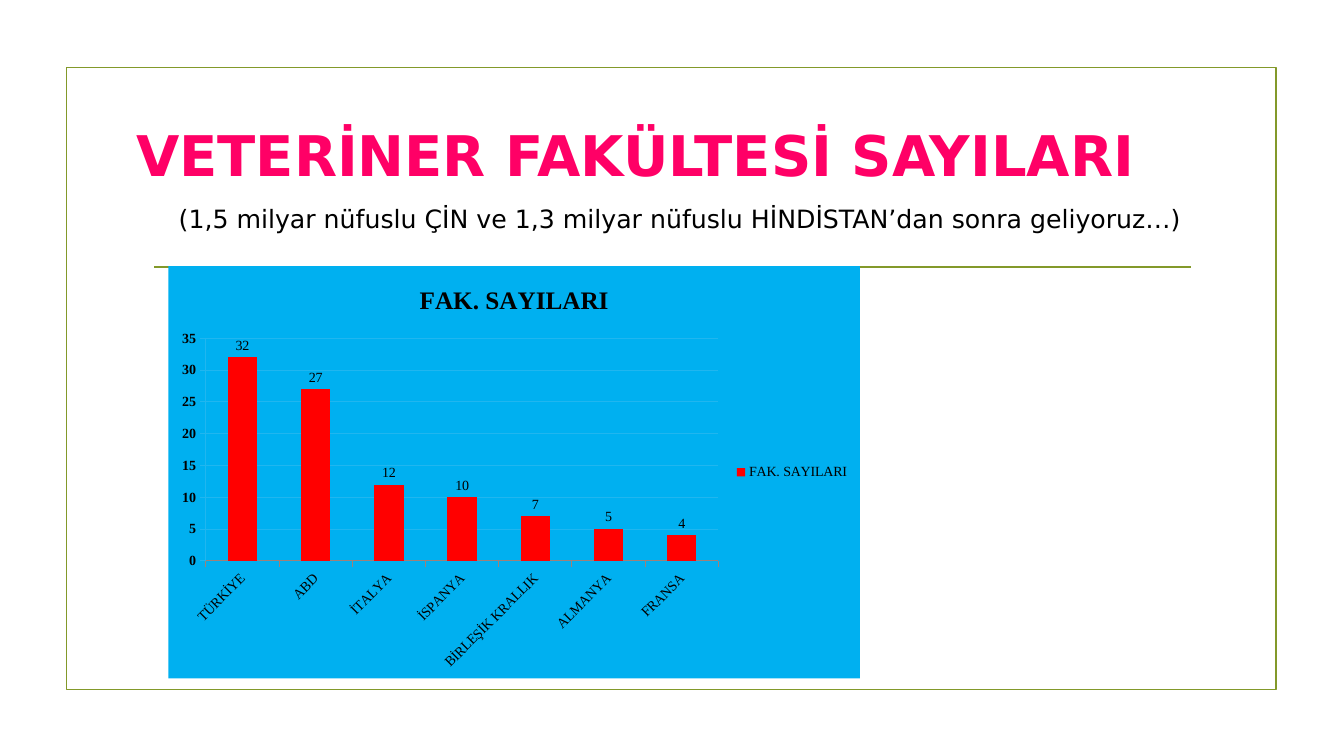
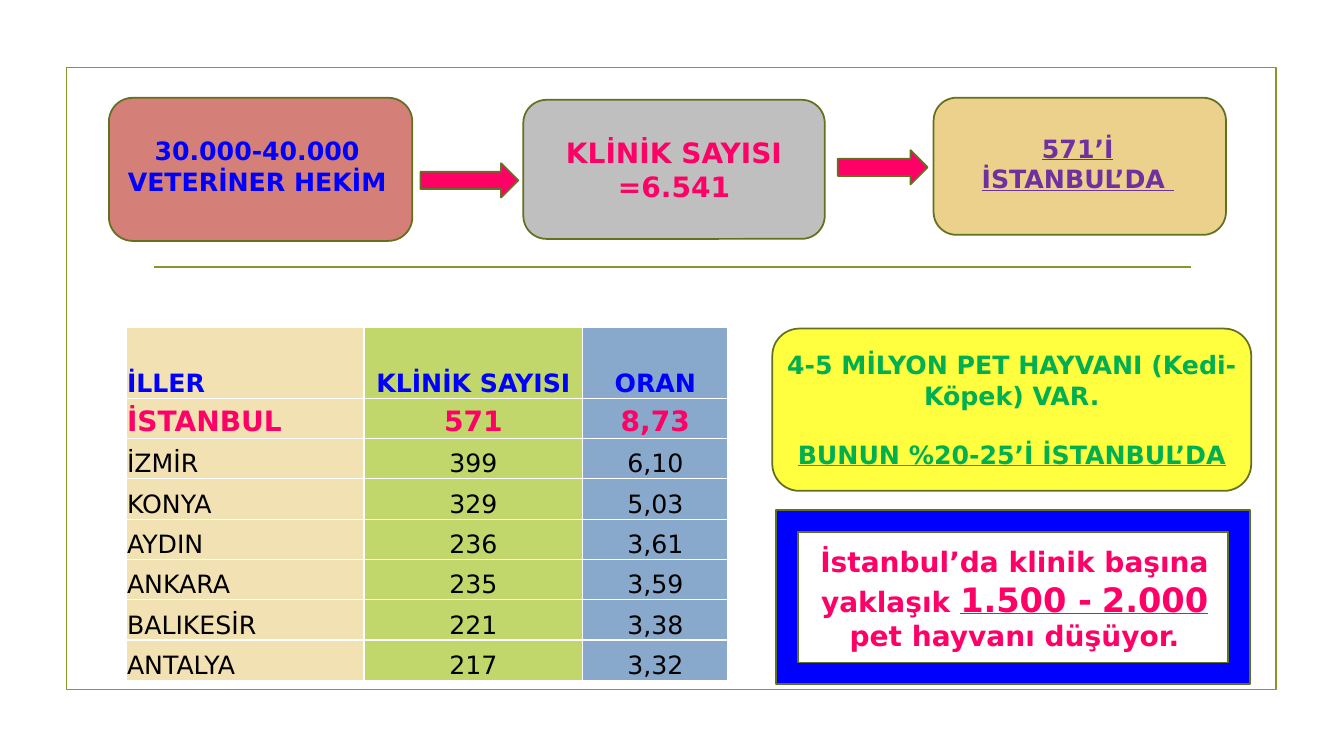
from dataclasses import dataclass

from lxml import etree
from pptx import Presentation
from pptx.chart.data import CategoryChartData
from pptx.dml.color import RGBColor
from pptx.enum.chart import XL_CHART_TYPE, XL_LABEL_POSITION, XL_LEGEND_POSITION
from pptx.enum.shapes import MSO_CONNECTOR, MSO_SHAPE
from pptx.enum.text import MSO_ANCHOR, MSO_AUTO_SIZE, PP_ALIGN
from pptx.oxml import parse_xml
from pptx.oxml.ns import nsdecls, qn
from pptx.util import Inches, Pt

CENTER, JUSTIFY, LEFT = PP_ALIGN.CENTER, PP_ALIGN.JUSTIFY, PP_ALIGN.LEFT
MIDDLE, BOTTOM = MSO_ANCHOR.MIDDLE, MSO_ANCHOR.BOTTOM
NO_AUTOFIT = MSO_AUTO_SIZE.NONE
RECTANGLE, ROUNDED = MSO_SHAPE.RECTANGLE, MSO_SHAPE.ROUNDED_RECTANGLE
FRAME, ARROW = MSO_SHAPE.FRAME, MSO_SHAPE.RIGHT_ARROW
STRAIGHT = MSO_CONNECTOR.STRAIGHT
COLUMN_CHART = XL_CHART_TYPE.COLUMN_CLUSTERED
LEGEND_RIGHT = XL_LEGEND_POSITION.RIGHT
OUTSIDE_END = XL_LABEL_POSITION.OUTSIDE_END
TITLE_ONLY, BLANK = 5, 6


@dataclass(frozen=True)
class Theme:
    font: str = "DejaVu Sans"
    chart_font: str = "Times New Roman"
    rule: str = "83992A"
    outline: str = "61711F"
    line_width: float = 1.25
    black: str = "000000"
    white: str = "FFFFFF"
    pink: str = "FF0066"
    blue: str = "0000FF"
    purple: str = "7030A0"
    green: str = "00B050"
    yellow: str = "FFFF00"
    rose: str = "D47F77"
    gray: str = "BFBFBF"
    sand: str = "EBD18C"
    sky: str = "00B0F0"
    red: str = "FF0000"
    axis: str = "A08078"
    grid: str = "20B6EF"
    columns: tuple = ("F2E1B3", "C1D66B", "88A9CB")
    title: int = 40
    accent: int = 24
    large: int = 20
    body: int = 18
    chart: int = 10


THEME = Theme()
SLIDE_SIZE = (13.33, 7.5)

TITLE = "VETERİNER FAKÜLTESİ SAYILARI"
SUBTITLE = "(1,5 milyar nüfuslu ÇİN ve 1,3 milyar nüfuslu HİNDİSTAN’dan sonra geliyoruz…)"
SERIES_NAME = "FAK. SAYILARI"
FACULTIES = {
    "TÜRKİYE": 32, "ABD": 27, "İTALYA": 12, "İSPANYA": 10,
    "BİRLEŞİK KRALLIK": 7, "ALMANYA": 5, "FRANSA": 4,
}

CLINICS = [
    ("İLLER", "KLİNİK SAYISI", "ORAN"),
    ("İSTANBUL", "571", "8,73"),
    ("İZMİR", "399", "6,10"),
    ("KONYA", "329", "5,03"),
    ("AYDIN", "236", "3,61"),
    ("ANKARA", "235", "3,59"),
    ("BALIKESİR", "221", "3,38"),
    ("ANTALYA", "217", "3,32"),
]
COLUMN_WIDTHS = (2.36, 2.17, 1.44)
HEADER_HEIGHT, ROW_HEIGHT = 0.7, 0.4

# Runs are (text, size, underlined); insets are left, top, right, bottom.
CARDS = [
    dict(kind=ROUNDED, box=(1.08, 0.97, 3.01, 1.42), fill=THEME.rose, color=THEME.blue,
         insets=(0.03, 0, 0.1, 0.07),
         paragraphs=[[("30.000-40.000 VETERİNER HEKİM", THEME.body, False)]]),
    dict(kind=ROUNDED, box=(5.19, 0.99, 2.99, 1.38), fill=THEME.gray, color=THEME.pink,
         insets=(0.2, 0, 0.2, 0),
         paragraphs=[[("KLİNİK SAYISI =6.541", THEME.large, False)]]),
    dict(kind=ROUNDED, box=(9.26, 0.97, 2.9, 1.36), fill=THEME.sand, color=THEME.purple,
         insets=(0.25, 0, 0.29, 0.05),
         paragraphs=[[("571’İ İSTANBUL’DA ", THEME.body, True)]]),
    dict(kind=ROUNDED, box=(7.66, 3.26, 4.75, 1.61), fill=THEME.yellow, color=THEME.green,
         insets=(0, 0, 0, 0), opacity=75,
         paragraphs=[[("4-5 MİLYON PET HAYVANI (Kedi-Köpek) VAR.", THEME.body, False)],
                     [("BUNUN %20-25’İ İSTANBUL’DA", THEME.body, True)]]),
    dict(kind=FRAME, box=(7.7, 5.06, 4.7, 1.73), fill=THEME.blue, color=THEME.pink,
         insets=(0.1, 0.03, 0.07, 0),
         paragraphs=[[("İstanbul’da klinik başına yaklaşık ", THEME.large, False),
                      ("1.500 -", THEME.accent, True),
                      (" ", THEME.large, True),
                      ("2.000 ", THEME.accent, True),
                      ("pet hayvanı düşüyor.", THEME.large, False)]]),
]
ARROWS = [(4.17, 1.62, 0.97, 0.34), (8.31, 1.49, 0.89, 0.34)]


def rgb(color):
    return RGBColor.from_string(color)


def inches(values):
    return [Inches(value) for value in values]


def style_font(font, size, color, bold=False, name=THEME.font):
    font.name, font.size, font.bold = name, Pt(size), bold
    font.color.rgb = rgb(color)


def style_line(line, color, width=THEME.line_width):
    line.color.rgb = rgb(color)
    line.width = Pt(width)


def add_shape(slide, kind, box, fill=None, outline=THEME.outline):
    shape = slide.shapes.add_shape(kind, *inches(box))
    shape.shadow.inherit = False
    if fill:
        shape.fill.solid()
        shape.fill.fore_color.rgb = rgb(fill)
    else:
        shape.fill.background()
    style_line(shape.line, outline)
    return shape


def add_framed_slide(presentation, layout):
    """Add a slide with the border and the rule that all slides share."""
    slide = presentation.slides.add_slide(presentation.slide_layouts[layout])
    add_shape(slide, RECTANGLE, (0.66, 0.67, 12, 6.17), outline=THEME.rule)
    rule = slide.shapes.add_connector(STRAIGHT, *inches((1.53, 2.65, 11.81, 2.65)))
    style_line(rule.line, THEME.rule)
    etree.SubElement(rule.element.spPr, qn("a:effectLst"))
    return slide


def set_insets(target, insets):
    (target.margin_left, target.margin_top,
     target.margin_right, target.margin_bottom) = inches(insets)


def format_title(title):
    title.left, title.top, title.width, title.height = inches((1.25, 0.84, 10.99, 1.5))
    frame = title.text_frame
    frame.word_wrap = True
    frame.auto_size = NO_AUTOFIT
    frame.vertical_anchor = MIDDLE
    set_insets(frame, (0.1, 0.05, 0.1, 0.05))
    frame.text = f"{TITLE}\n{SUBTITLE}"
    styles = [(JUSTIFY, THEME.title, THEME.pink, True),
              (CENTER, THEME.body, THEME.black, False)]
    for paragraph, (alignment, *font_style) in zip(frame.paragraphs, styles):
        paragraph.alignment = alignment
        paragraph.line_spacing = 1.5
        paragraph.space_before = Pt(0)
        style_font(paragraph.font, *font_style)


def add_faculty_chart(slide):
    data = CategoryChartData()
    data.categories = list(FACULTIES)
    data.add_series(SERIES_NAME, list(FACULTIES.values()))
    chart = slide.shapes.add_chart(
        COLUMN_CHART, *inches((1.67, 2.64, 6.86, 4.09)), data).chart
    style_font(chart.font, THEME.chart, THEME.black, name=THEME.chart_font)

    chart.has_title = True
    chart.chart_title.include_in_layout = False
    chart.chart_title.text_frame.text = SERIES_NAME
    style_font(chart.chart_title.text_frame.paragraphs[0].font,
               THEME.body, THEME.black, True, THEME.chart_font)
    chart.has_legend = True
    chart.legend.position = LEGEND_RIGHT
    chart.legend.include_in_layout = False

    plot = chart.plots[0]
    plot.gap_width = 150
    plot.vary_by_categories = False
    fill = plot.series[0].format.fill
    fill.solid()
    fill.fore_color.rgb = rgb(THEME.red)
    plot.has_data_labels = True
    plot.data_labels.show_value = True
    plot.data_labels.position = OUTSIDE_END

    values, categories = chart.value_axis, chart.category_axis
    values.minimum_scale, values.maximum_scale, values.major_unit = 0, 35, 5
    style_line(values.major_gridlines.format.line, THEME.grid, 0.75)
    style_line(values.format.line, THEME.grid, 0.75)
    style_line(categories.format.line, THEME.axis, 0.75)
    for axis, bold in ((values, True), (categories, False)):
        style_font(axis.tick_labels.font, THEME.chart, THEME.black, bold, THEME.chart_font)

    chart_space = chart.element
    labels = chart_space.find(f".//{qn('c:catAx')}/{qn('c:txPr')}/{qn('a:bodyPr')}")
    labels.set("rot", "-2700000")
    chart_space.find(qn("c:chart")).addnext(parse_xml(
        f'<c:spPr {nsdecls("c", "a")}><a:solidFill><a:srgbClr val="{THEME.sky}"/>'
        '</a:solidFill><a:ln><a:noFill/></a:ln></c:spPr>'))


def border_cell(cell):
    properties = cell._tc.get_or_add_tcPr()
    for index, side in enumerate(("lnL", "lnR", "lnT", "lnB")):
        properties.insert(index, parse_xml(
            f'<a:{side} {nsdecls("a")} w="{Pt(1)}"><a:solidFill>'
            f'<a:srgbClr val="{THEME.white}"/></a:solidFill></a:{side}>'))


def add_clinic_table(slide):
    heights = [HEADER_HEIGHT] + [ROW_HEIGHT] * (len(CLINICS) - 1)
    table = slide.shapes.add_table(
        len(CLINICS), len(COLUMN_WIDTHS),
        *inches((1.25, 3.25, sum(COLUMN_WIDTHS), sum(heights)))).table
    table.first_row = table.horz_banding = False
    for column, width in zip(table.columns, COLUMN_WIDTHS):
        column.width = Inches(width)
    row_styles = {0: (THEME.body, THEME.blue, True), 1: (THEME.large, THEME.pink, True)}
    for row, (texts, height) in enumerate(zip(CLINICS, heights)):
        table.rows[row].height = Inches(height)
        for column, text in enumerate(texts):
            cell = table.cell(row, column)
            cell.text = text
            cell.vertical_anchor = BOTTOM
            set_insets(cell, (0.01, 0.01, 0.01, 0))
            cell.fill.solid()
            cell.fill.fore_color.rgb = rgb(THEME.columns[column])
            border_cell(cell)
            paragraph = cell.text_frame.paragraphs[0]
            paragraph.alignment = CENTER if column else LEFT
            style_font(paragraph.font, *row_styles.get(row, (THEME.body, THEME.black)))


def add_card(slide, kind, box, fill, color, insets, paragraphs, opacity=100):
    card = add_shape(slide, kind, box, fill)
    if opacity < 100:
        tint = card.element.spPr.find(f"{qn('a:solidFill')}/{qn('a:srgbClr')}")
        etree.SubElement(tint, qn("a:alpha"), val=str(opacity * 1000))
    frame = card.text_frame
    frame.word_wrap = True
    frame.vertical_anchor = MIDDLE
    set_insets(frame, insets)
    for index, runs in enumerate(paragraphs):
        paragraph = frame.add_paragraph() if index else frame.paragraphs[0]
        paragraph.alignment = CENTER
        paragraph.space_before = Pt(21 if index else 0)
        for text, size, underlined in runs:
            run = paragraph.add_run()
            run.text = text
            style_font(run.font, size, color, True)
            run.font.underline = underlined


def main():
    presentation = Presentation()
    presentation.slide_width, presentation.slide_height = inches(SLIDE_SIZE)

    faculties = add_framed_slide(presentation, TITLE_ONLY)
    format_title(faculties.shapes.title)
    add_faculty_chart(faculties)

    clinics = add_framed_slide(presentation, BLANK)
    add_clinic_table(clinics)
    for card in CARDS:
        add_card(clinics, **card)
    for box in ARROWS:
        add_shape(clinics, ARROW, box, THEME.pink)

    presentation.save("out.pptx")


if __name__ == "__main__":
    main()
